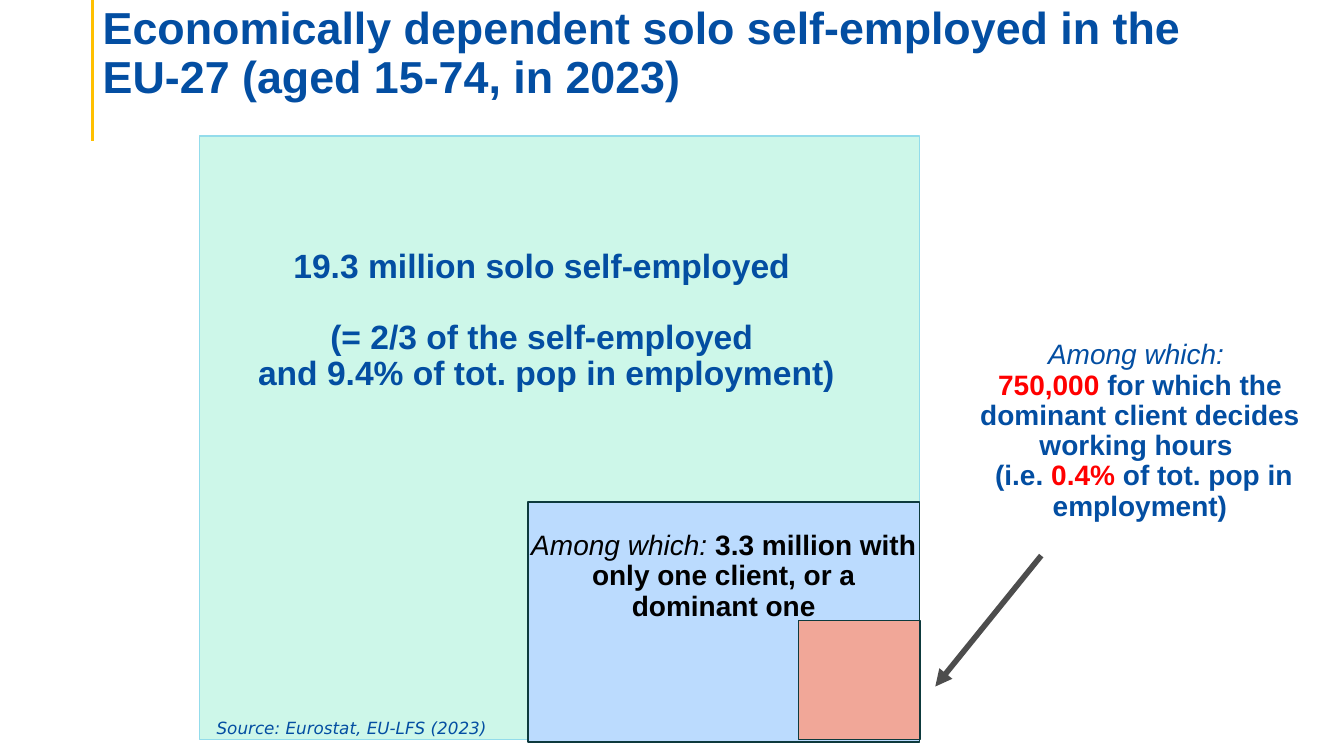
import pptx
import pptx.util
import pptx.dml.color
import pptx.enum.shapes
import pptx.enum.text
import pptx.oxml
import pptx.oxml.ns

Cm, Pt = pptx.util.Cm, pptx.util.Pt
HUES = {
    "navy": "034EA2", "gold": "FFC000", "mint": "CDF7E9", "aqua": "93DCEB",
    "sky": "BBDBFE", "coral": "F1A798", "pine": "0D3A3D", "red": "FF0000",
    "black": "000000", "gray": "4D4D4D",
}
BOLD = {"bold": True, "italic": False}
SLANT = {"bold": False, "italic": True}
FRAME = {
    "word_wrap": True, "vertical_anchor": pptx.enum.text.MSO_ANCHOR.BOTTOM,
    "margin_left": Cm(0.25), "margin_right": Cm(0.25),
    "margin_top": Cm(0.13), "margin_bottom": 0,
}


def hue(name):
    return pptx.dml.color.RGBColor.from_string(HUES[name])


def apply(target, values):
    for key, value in values.items():
        setattr(target, key, value)


def write(slide, box, paras, size, center=True, face="Arial", gaps=None):
    frame = slide.shapes.add_textbox(*map(Cm, box)).text_frame
    apply(frame, FRAME)
    align = pptx.enum.text.PP_ALIGN
    for i, runs in enumerate(paras):
        para = frame.add_paragraph() if i else frame.paragraphs[0]
        apply(para, {"line_spacing": 0.9,
                     "alignment": align.CENTER if center else align.LEFT})
        if gaps and i in gaps:
            para.space_before = Pt(gaps[i])
        for text, color, style in runs:
            run = para.add_run()
            run.text = text
            apply(run.font, {"name": face, "size": Pt(size), **style})
            run.font.color.rgb = hue(color)


def block(slide, box, fill, edge):
    shape = slide.shapes.add_shape(
        pptx.enum.shapes.MSO_SHAPE.RECTANGLE, *map(Cm, box))
    shape.shadow.inherit = False
    shape.fill.solid()
    shape.fill.fore_color.rgb = hue(fill)
    shape.line.color.rgb = hue(edge)
    shape.line.width = Pt(1)


def stroke(slide, ends, color, width, arrow=False):
    line = slide.shapes.add_connector(
        pptx.enum.shapes.MSO_CONNECTOR.STRAIGHT, *map(Cm, ends))
    line.line.color.rgb = hue(color)
    line.line.width = Pt(width)
    props = line.element.spPr
    if arrow:
        head = pptx.oxml.parse_xml(
            "<a:tailEnd %s type='triangle'/>" % pptx.oxml.ns.nsdecls("a"))
        props.find(pptx.oxml.ns.qn("a:ln")).append(head)
    props.append(pptx.oxml.parse_xml(
        "<a:effectLst %s/>" % pptx.oxml.ns.nsdecls("a")))


def header(slide, x, y, w, h):
    stroke(slide, (x, y, x, y + h), "gold", 2.25)
    title = "Economically dependent solo self-employed in the EU-27 (aged 15-74, in 2023)"
    write(slide, (x, y + 0.41, w, 2.18), [[(title, "navy", BOLD)]], 32, center=False)


def nest(slide, x, y, w, h):
    right, base = x + w, y + h
    block(slide, (x, y, w, h), "mint", "aqua")
    lines = ("19.3 million solo self-employed ", "(= 2/3 of the self-employed ",
             "and 9.4% of tot. pop in employment)")
    write(slide, (x + 0.51, y + 2.18, 16.46, 4.29),
          [[(text, "navy", BOLD)] for text in lines], 24, gaps={1: 25})
    block(slide, (right - 9.86, base - 5.99, 9.86, 6.05), "sky", "pine")
    write(slide, (right - 10.06, base - 6.52, 10.26, 3.56),
          [[("Among which: ", "black", SLANT),
            ("3.3 million with only one client, or a dominant one", "black", BOLD)]], 20)
    block(slide, (right - 3.05, base - 3, 3.07, 3), "coral", "pine")
    write(slide, (x + 0.18, base - 2.23, 23.44, 2.18),
          [[("Source: Eurostat, EU-LFS (2023)", "navy", SLANT)]],
          12, center=False, face="DejaVu Sans")


def callout(slide, x, y, w, h):
    write(slide, (x, y, w, h), [
        [("Among which: ", "navy", SLANT)],
        [("750,000", "red", BOLD),
         (" for which the dominant client decides working hours ", "navy", BOLD)],
        [(" (i.e. ", "navy", BOLD), ("0.4%", "red", BOLD),
         (" of tot. pop in employment)", "navy", BOLD)],
    ], 20)
    base = y + h
    stroke(slide, (x + 2.64, base + 0.84, x - 0.03, base + 4.14), "gray", 4, arrow=True)


def main():
    deck = pptx.Presentation()
    apply(deck, {"slide_width": Cm(33.87), "slide_height": Cm(19.05)})
    slide = deck.slides.add_slide(deck.slide_layouts[6])
    header(slide, 2.34, 0, 29.21, 3.56)
    nest(slide, 5.03, 3.43, 18.14, 15.21)
    callout(slide, 23.6, 9.6, 10.26, 3.56)
    deck.save("out.pptx")


if __name__ == "__main__":
    main()
